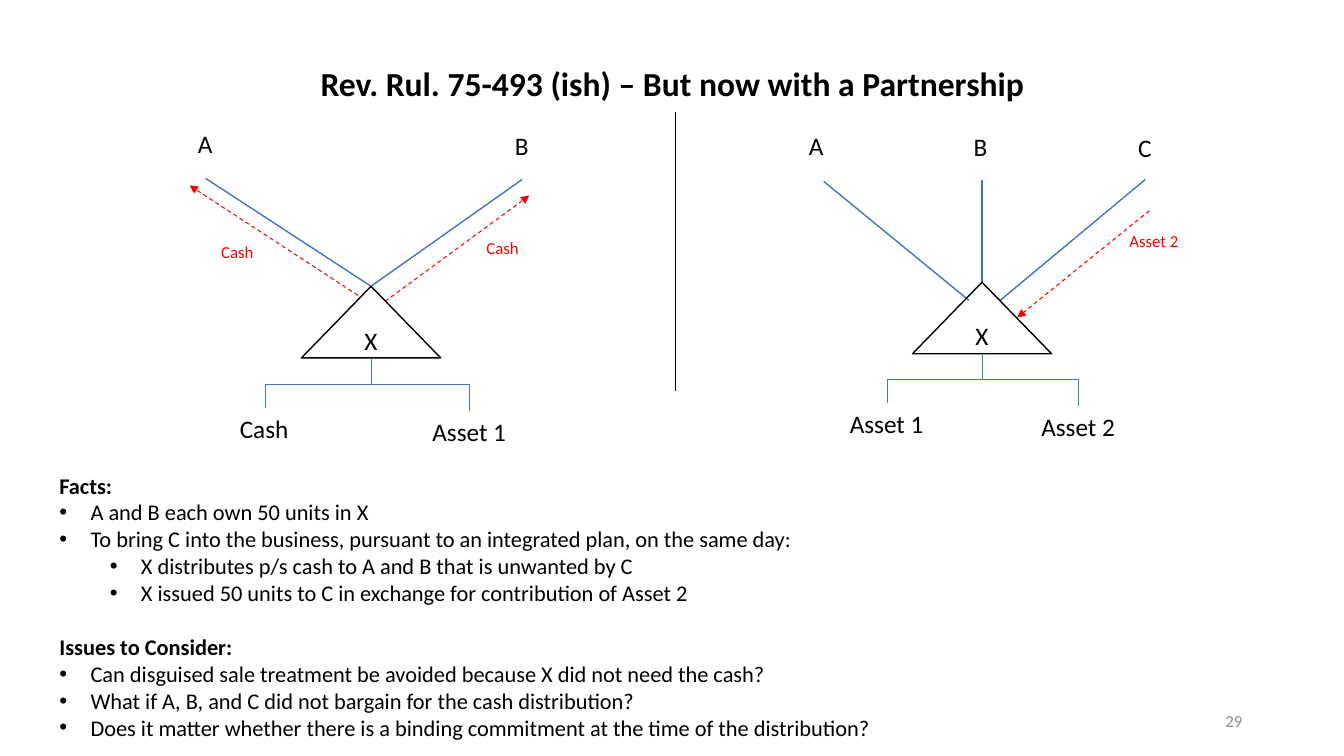
import pptx
import pptx.util
import pptx.dml.color
import pptx.enum.dml
import pptx.enum.shapes
import pptx.enum.text
import pptx.oxml.ns
import lxml.etree

Inches, Pt = pptx.util.Inches, pptx.util.Pt
Kind = pptx.enum.shapes.MSO_SHAPE
Link = pptx.enum.shapes.MSO_CONNECTOR
Align = pptx.enum.text.PP_ALIGN
Anchor = pptx.enum.text.MSO_ANCHOR
Fit = pptx.enum.text.MSO_AUTO_SIZE
qn = pptx.oxml.ns.qn
BLACK, WHITE, RED, BLUE, GRAY = "000000", "FFFFFF", "FF0000", "4472C4", "8C8C8C"


def color(code):
    """Turn a hex string into a colour."""
    return pptx.dml.color.RGBColor.from_string(code)


def child(parent, tag, **attrs):
    """Append a drawing element with its attributes."""
    return lxml.etree.SubElement(parent, qn(tag), attrs)


def write(para, text, size, code=BLACK, bold=False):
    """Add one styled run to a paragraph."""
    run = para.add_run()
    run.text = text
    font = run.font
    font.name, font.size, font.bold = "Calibri", Pt(size), bold
    font.color.rgb = color(code)


def label(slide, box, text, size, code=BLACK, bold=False, align=Align.CENTER, wrap=True):
    """Add a text box with one line and return it."""
    shape = slide.shapes.add_textbox(*map(Inches, box))
    shape.text_frame.word_wrap = wrap
    para = shape.text_frame.paragraphs[0]
    para.alignment = align
    write(para, text, size, code, bold)
    return shape


def note(slide, left, top, text):
    """Add a small red label beside an arrow."""
    shape = label(slide, (left, top, 1.33, 0.21), text, 12, RED)
    shape.text_frame.paragraphs[0].line_spacing = Pt(14)


def asset(slide, left, top, width, text):
    """Name a holding below the partnership."""
    shape = label(slide, (left, top, width, 0.4), text, 18, align=Align.LEFT, wrap=False)
    shape.text_frame.auto_size = Fit.SHAPE_TO_FIT_TEXT


def node(slide, kind, box, text):
    """Add a preset shape with a centred letter."""
    shape = slide.shapes.add_shape(kind, *map(Inches, box))
    shape.shadow.inherit = False
    frame = shape.text_frame
    frame.vertical_anchor = Anchor.MIDDLE
    frame.paragraphs[0].alignment = Align.CENTER
    write(frame.paragraphs[0], text, 18)
    return shape


def owner(slide, left, top, text):
    """Add a partner as a white ellipse."""
    shape = node(slide, Kind.OVAL, (left, top, 0.65, 0.67), text)
    shape.fill.solid()
    shape.fill.fore_color.rgb = color(WHITE)
    shape.line.fill.background()


def firm(slide, left, top):
    """Add the partnership as an outlined triangle."""
    shape = node(slide, Kind.ISOSCELES_TRIANGLE, (left, top, 1.38, 0.71), "X")
    shape.text_frame.word_wrap = False
    shape.fill.background()
    shape.line.color.rgb = color(BLACK)
    shape.line.width = Pt(1)


def join(slide, ends, code=BLUE, width=1, kind=Link.STRAIGHT):
    """Draw a connector without a shadow and return it."""
    link = slide.shapes.add_connector(kind, *map(Inches, ends))
    link.line.color.rgb = color(code)
    link.line.width = Pt(width)
    child(link._element.spPr, "a:effectLst")
    return link


def arrow(slide, ends):
    """Draw a dashed red arrow toward its second end."""
    link = join(slide, ends, RED, 0.75)
    link.line.dash_style = pptx.enum.dml.MSO_LINE.DASH
    child(link.line._get_or_add_ln(), "a:tailEnd", type="triangle")


def branch(slide, x, y, hub, base, bar):
    """Draw an elbow from a holding up to the triangle base."""
    wide, high = y - base, abs(hub - x)
    left, top = (x + hub - wide) / 2, (y + base - high) / 2
    link = join(slide, (left, top, left + wide, top + high), BLUE, 0.5, Link.ELBOW)
    props = link._element.spPr
    frame = props.find(qn("a:xfrm"))
    frame.set("rot", "5400000" if x < hub else "16200000")
    frame.set("flipV", "1")
    if x < hub:
        frame.set("flipH", "1")
    guides = props.find(qn("a:prstGeom")).find(qn("a:avLst"))
    ratio = round((y - bar) / wide * 100000)
    child(guides, "a:gd", name="adj1", fmla=f"val {ratio}")


def facts(slide):
    """Add the bulleted facts and issues."""
    rows = [
        (None, "Facts:"),
        (0, "A and B each own 50 units in X"),
        (0, "To bring C into the business, pursuant to an integrated plan, on the same day:"),
        (1, "X distributes p/s cash to A and B that is unwanted by C"),
        (1, "X issued 50 units to C in exchange for contribution of Asset 2"),
        (None, "Issues to Consider:"),
        (0, "Can disguised sale treatment be avoided because X did not need the cash?"),
        (0, "What if A, B, and C did not bargain for the cash distribution?"),
        (0, "Does it matter whether there is a binding commitment at the time of the distribution?"),
    ]
    box = slide.shapes.add_textbox(*map(Inches, (0.49, 4.63, 12.35, 2.79)))
    frame = box.text_frame
    frame.word_wrap = True
    frame.auto_size = Fit.SHAPE_TO_FIT_TEXT
    for index, (level, text) in enumerate(rows):
        para = frame.add_paragraph() if index else frame.paragraphs[0]
        write(para, text, 16, bold=level is None)
        if level is None:
            para.space_before = Pt(19.5 if index else 0)
            continue
        para.level = level
        props = para._p.get_or_add_pPr()
        props.set("marL", str(Inches(0.31 + 0.5 * level)))
        props.set("indent", str(Inches(-0.31)))
        child(props, "a:buFont", typeface="Arial")
        child(props, "a:buChar", char="•")


def before(slide):
    """Draw the two partners and the cash paid out."""
    owner(slide, 1.71, 1.09, "A")
    owner(slide, 4.85, 1.11, "B")
    join(slide, (5.18, 1.78, 3.68, 2.84))
    join(slide, (2.04, 1.77, 3.68, 2.84))
    arrow(slide, (3.82, 2.99, 5.25, 1.94))
    arrow(slide, (3.55, 2.93, 1.88, 1.84))
    note(slide, 4.32, 2.31, "Cash")
    note(slide, 1.69, 2.35, "Cash")
    firm(slide, 2.99, 2.84)
    asset(slide, 2.28, 4.05, 0.69, "Cash")
    asset(slide, 4.19, 4.08, 0.94, "Asset 1")
    for x, y in ((2.63, 4.05), (4.66, 4.08)):
        branch(slide, x, y, 3.68, 3.55, 3.81)


def after(slide):
    """Draw the three partners and the asset paid in."""
    for step, name in enumerate("ABC"):
        owner(slide, 7.77 + 1.63 * step, 1.11 + 0.01 * step, name)
    join(slide, (8.17, 1.8, 9.61, 2.98))
    join(slide, (9.74, 1.79, 9.74, 2.8))
    join(slide, (11.36, 1.78, 9.92, 2.98))
    arrow(slide, (11.4, 2.09, 10.09, 3.15))
    note(slide, 10.78, 2.25, "Asset 2")
    firm(slide, 9.05, 2.8)
    asset(slide, 8.33, 4, 0.94, "Asset 1")
    asset(slide, 10.23, 4.03, 0.94, "Asset 2")
    for x, y in ((8.8, 4), (10.7, 4.03)):
        branch(slide, x, y, 9.74, 3.51, 3.76)


def main():
    """Build and save the slide."""
    deck = pptx.Presentation()
    deck.slide_width, deck.slide_height = Inches(13.33), Inches(7.5)
    slide = deck.slides.add_slide(deck.slide_layouts[6])
    page = label(slide, (9.42, 6.95, 3, 0.4), "29", 12, GRAY, align=Align.RIGHT)
    page.text_frame.vertical_anchor = Anchor.MIDDLE
    facts(slide)
    before(slide)
    join(slide, (6.7, 3.88, 6.7, 1.11), BLACK)
    after(slide)
    title = "Rev. Rul. 75-493 (ish) – But now with a Partnership"
    label(slide, (0.92, 0.58, 11.5, 0.67), title, 24, bold=True)
    deck.save("out.pptx")


if __name__ == "__main__":
    main()
